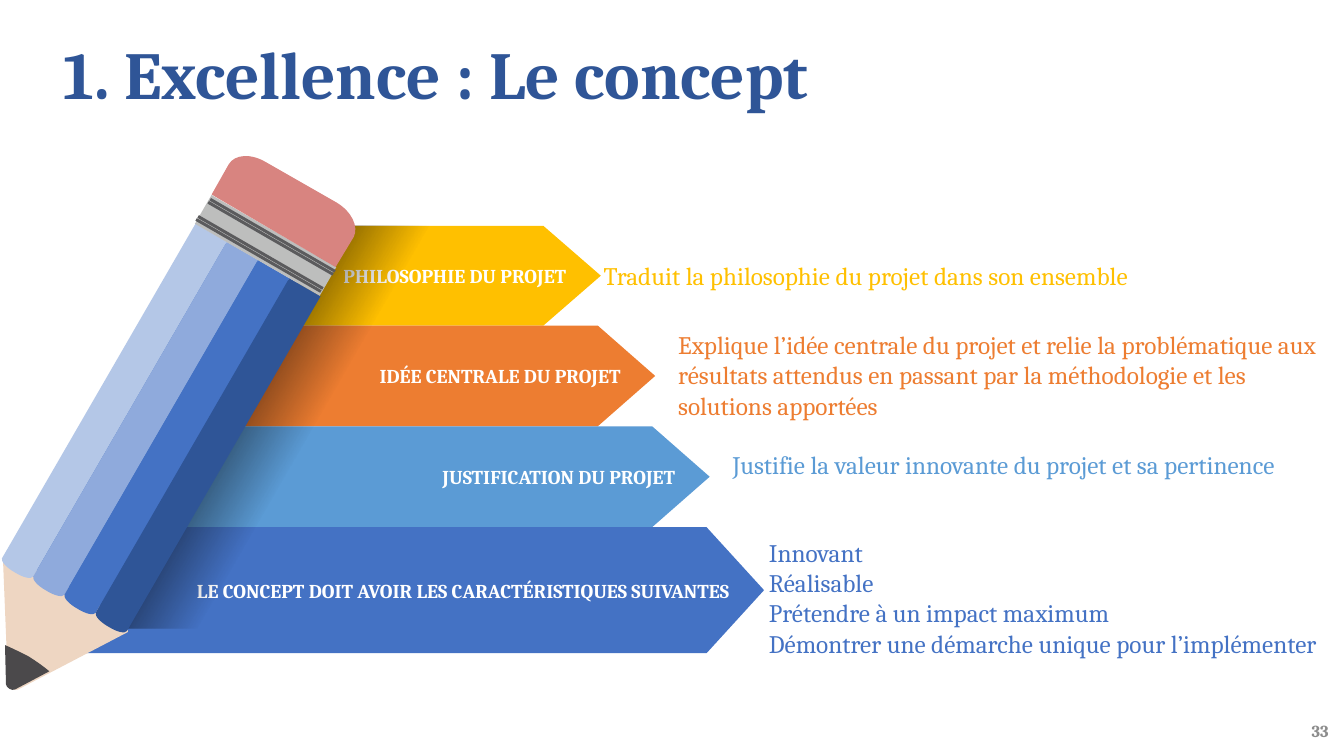
from dataclasses import dataclass

from lxml import etree
from pptx import Presentation
from pptx import util as u
from pptx.dml.color import RGBColor
from pptx.enum import shapes, text
from pptx.oxml.ns import qn


@dataclass(frozen=True)
class Theme:
    font: str = "Cambria"
    title_size: int = 48
    body_size: int = 18
    label_size: int = 14
    number_size: int = 12
    navy: str = "2F5597"
    blue: str = "4472C4"
    sky: str = "5B9BD5"
    orange: str = "ED7D31"
    gold: str = "FFC000"
    periwinkle: str = "8FAADC"
    pale_blue: str = "B4C7E7"
    white: str = "FFFFFF"
    black: str = "000000"
    grey: str = "8C8C8C"
    wood: str = "EED6C2"
    lead: str = "4B494B"
    metal: str = "BDBEBD"
    groove: str = "5B5B5D"
    eraser: str = "D88480"


CM_PER_INCH = 2.54
PENCIL_ANGLE = 30


def length(inches):
    return u.Cm(inches * CM_PER_INCH)


def write_text(shape, content, *, font, size, color, bold=False, align="LEFT",
               anchor="TOP", right_inset=0.1, line_spacing=1.0):
    frame = shape.text_frame
    frame.word_wrap = True
    frame.margin_right = length(right_inset)
    frame.vertical_anchor = text.MSO_ANCHOR[anchor]
    frame.text = content
    for paragraph in frame.paragraphs:
        paragraph.alignment = text.PP_ALIGN[align]
        paragraph.line_spacing = line_spacing
        paragraph.font.name = font
        paragraph.font.size = u.Pt(size)
        paragraph.font.bold = bold
        paragraph.font.color.rgb = RGBColor.from_string(color)


def moved(segments, right, down):
    return [tuple(value + (right, down)[axis % 2] for axis, value in enumerate(segment))
            for segment in segments]


def bend(shape, segments):
    lines = iter(list(shape._element.iter(qn("a:lnTo"))))
    for segment in segments:
        line = next(lines)
        if len(segment) == 6:
            line.addprevious(curve := etree.Element(qn("a:cubicBezTo")))
            for control in (line, next(lines), next(lines)):
                curve.append(control[0])
                control.getparent().remove(control)


class SlideBuilder:
    def __init__(self, slide, theme):
        self.slide = slide
        self.theme = theme

    def finish(self, shape, color):
        shape.shadow.inherit = False
        shape.line.fill.background()
        if color:
            shape.fill.solid()
            shape.fill.fore_color.rgb = RGBColor.from_string(color)
        return shape

    def text_box(self, content, left, top, width, height, **style):
        box = self.slide.shapes.add_textbox(*map(length, (left, top, width, height)))
        write_text(box, content, font=self.theme.font, **style)

    def outline(self, segments, color=None):
        start, *points = [tuple(map(length, segment[axis:axis + 2]))
                          for segment in segments for axis in range(0, len(segment), 2)]
        builder = self.slide.shapes.build_freeform(*start, scale=1.0)
        builder.add_line_segments(points, close=True)
        shape = builder.convert_to_shape()
        bend(shape, segments[1:])
        return self.finish(shape, color)

    def band(self, left, top, width, height, color):
        shape = self.slide.shapes.add_shape(
            shapes.MSO_SHAPE.RECTANGLE, *map(length, (left, top, width, height)))
        shape.rotation = PENCIL_ANGLE
        self.finish(shape, color)

    def banner(self, label, color, tip, top, bottom, top_left, bottom_left):
        shoulder = tip - 0.57
        shape = self.outline([(top_left, top), (shoulder, top), (tip, (top + bottom) / 2),
                              (shoulder, bottom), (bottom_left, bottom)], color)
        write_text(shape, label, font=self.theme.font, size=self.theme.label_size,
                   color=self.theme.white, bold=True, align="RIGHT", anchor="MIDDLE",
                   right_inset=0.34)

    def shade(self, segments):
        shape = self.outline(segments)
        shape.fill.gradient()
        shape.fill.gradient_angle = 180 - PENCIL_ANGLE
        stops = shape._element.spPr.find(".//" + qn("a:gsLst"))
        for stop in list(stops):
            stops.remove(stop)
        for position, alpha in ((0, 0), (45, 0), (74, 100)):
            stop = etree.SubElement(stops, qn("a:gs"), pos=str(position * 1000))
            color = etree.SubElement(stop, qn("a:srgbClr"), val=self.theme.black)
            etree.SubElement(color, qn("a:alpha"), val=str(alpha * 1000))

    def pencil(self):
        theme = self.theme
        self.outline([(1.96, 2.26), (3.12, 2.93), (1.2, 6.25),
                      (1.18, 6.28, 0.91, 6.15, 0.59, 5.97),
                      (0.27, 5.78, 0.03, 5.61, 0.04, 5.58)], theme.blue)
        wood = [(0.52, 5.83), (0.86, 6.02, 1.12, 6.22, 1.09, 6.27), (0, 6.84),
                (-0.03, 6.86, -0.09, 6.82, -0.1, 6.79), (-0.15, 5.55),
                (-0.12, 5.51, 0.18, 5.63, 0.52, 5.83)]
        lead = [(0.1, 6.51), (0.02, 6.47, -0.06, 6.43, -0.13, 6.4), (-0.12, 6.79),
                (-0.12, 6.82, -0.06, 6.86, -0.03, 6.84), (0.31, 6.66),
                (0.25, 6.61, 0.18, 6.56, 0.1, 6.51)]
        for segments, color in ((wood, theme.wood), (lead, theme.lead)):
            self.outline(moved(segments, 0.18, 0), color)

        stripe = [(1.94, 2.22), (2.25, 2.4), (0.33, 5.72),
                  (0.31, 5.75, 0.23, 5.73, 0.15, 5.68),
                  (0.06, 5.63, 0.01, 5.57, 0.02, 5.54)]
        stripe_colors = (theme.pale_blue, theme.periwinkle, theme.blue, theme.navy)
        for index, color in enumerate(stripe_colors):
            self.outline(moved(stripe, 0.31 * index, 0.18 * index), color)

        self.band(1.92, 2.27, 1.43, 0.33, theme.metal)
        eraser = [(3.52, 2.01), (2.82, 1.61), (2.67, 1.52, 2.51, 1.53, 2.45, 1.63),
                  (2.28, 1.93), (3.51, 2.65), (3.69, 2.35),
                  (3.74, 2.25, 3.67, 2.1, 3.52, 2.01)]
        self.outline(moved(eraser, -0.18, 0), theme.eraser)
        for left, top in ((1.97, 2.35), (1.99, 2.32), (1.85, 2.52), (1.87, 2.49)):
            self.band(left, top, 1.43, 0.03, theme.groove)


def main():
    theme = Theme()
    presentation = Presentation()
    presentation.slide_width = length(13.333)
    presentation.slide_height = length(7.5)
    slide = presentation.slides.add_slide(presentation.slide_layouts[6])
    builder = SlideBuilder(slide, theme)

    builder.text_box("1. Excellence : Le concept", 0.53, 0.4, 12.26, 0.75,
                     size=theme.title_size, color=theme.navy, bold=True,
                     anchor="MIDDLE", line_spacing=0.9)
    builder.text_box("33", 10.28, 7.05, 3, 0.4, size=theme.number_size,
                     color=theme.grey, bold=True, align="RIGHT", anchor="MIDDLE")

    banners = (
        ("PHILOSOPHIE DU PROJET", theme.gold, 3.32, 2.67),
        ("IDÉE CENTRALE DU PROJET", theme.orange, 2.3, 1.64),
        ("JUSTIFICATION DU PROJET", theme.sky, 1.51, 0.85),
        ("LE CONCEPT DOIT AVOIR LES CARACTÉRISTIQUES SUIVANTES", theme.blue, 1.36, 0.71),
    )
    edges = [2.24, 3.23, 4.23, 5.23, 6.48]
    for index, (label, color, top_left, bottom_left) in enumerate(banners):
        builder.banner(label, color, 5.96 + 0.54 * index, edges[index], edges[index + 1],
                       top_left, bottom_left)

    builder.shade([(3.32, 2.24), (4.87, 2.24), (2.26, 6.23), (0.71, 6.23)])
    builder.pencil()

    descriptions = (
        ("Traduit la philosophie du projet dans son ensemble",
         theme.gold, 5.89, 2.53, 6.19, 0.4),
        ("Explique l’idée centrale du projet et relie la problématique aux résultats "
         "attendus en passant par la méthodologie et les solutions apportées",
         theme.orange, 6.63, 3.22, 6.64, 1.01),
        ("Justifie la valeur innovante du projet et sa pertinence",
         theme.sky, 7.17, 4.41, 5.67, 0.71),
        ("Innovant\nRéalisable\nPrétendre à un impact maximum\n"
         "Démontrer une démarche unique pour l’implémenter",
         theme.blue, 7.53, 5.28, 5.8, 1.62),
    )
    for content, color, *box in descriptions:
        builder.text_box(content, *box, size=theme.body_size, color=color)

    presentation.save("out.pptx")


if __name__ == "__main__":
    main()
